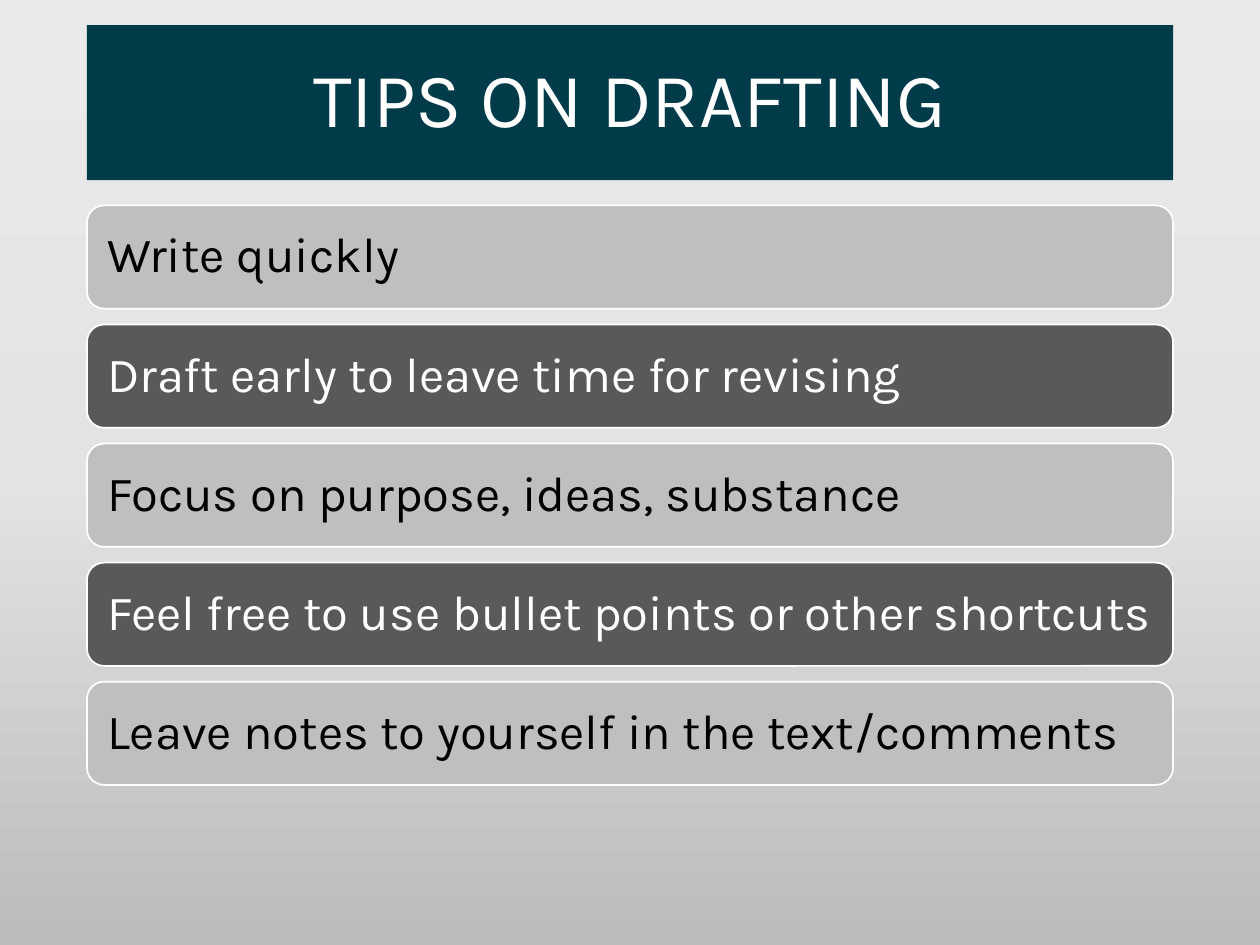
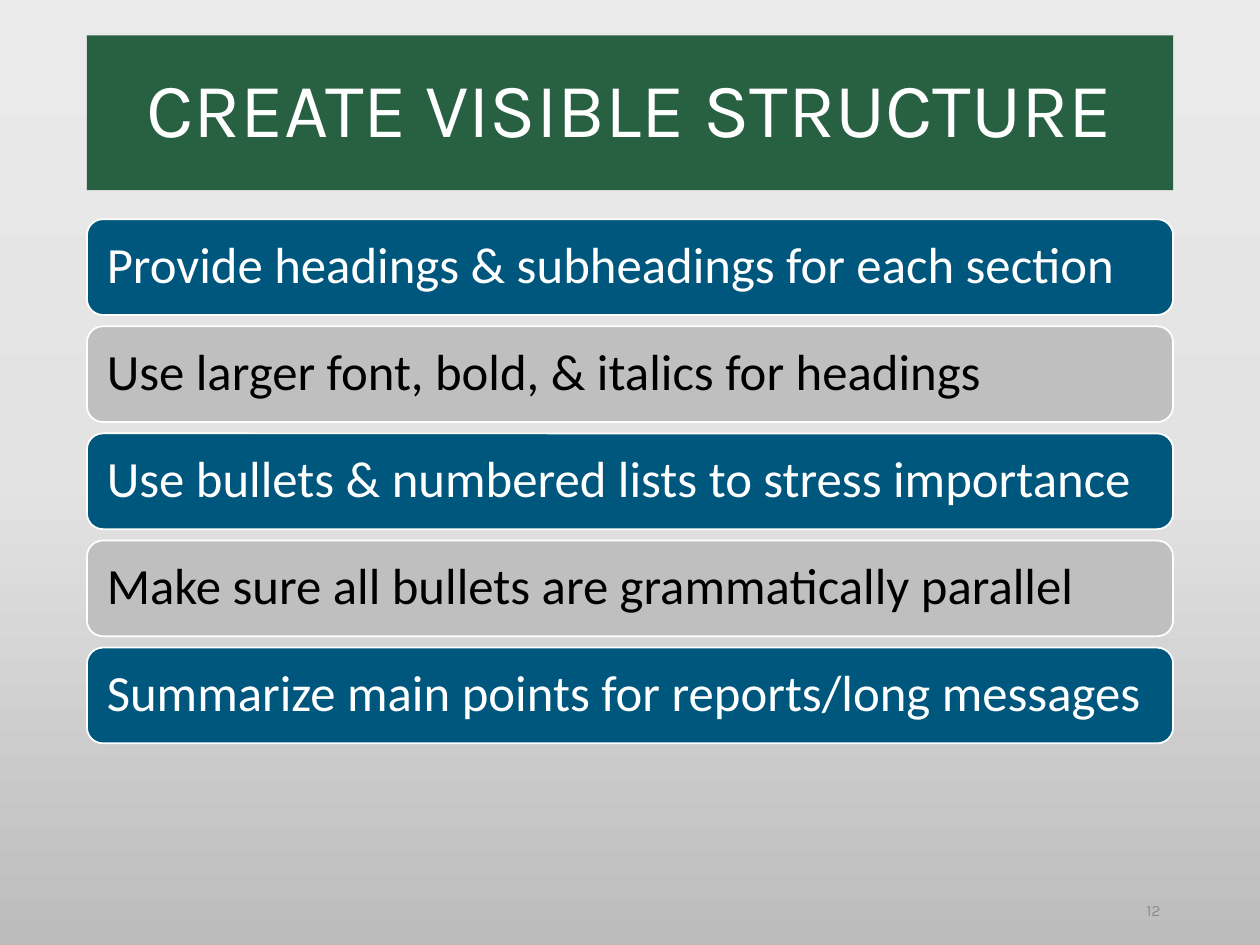
import copy

import pptx
import pptx.dml.color
import pptx.enum.shapes
import pptx.enum.text
import pptx.oxml.ns
import pptx.util
from pptx.util import Inches

COLORS = {
    "white": "FFFFFF",
    "black": "000000",
    "teal": "003B4A",
    "green": "286142",
    "blue": "00577D",
    "dark gray": "595959",
    "light gray": "BFBFBF",
    "number gray": "8C8C8C",
}
BACKGROUND_STOPS = [(0, "EBEAEA"), (0.5, "E4E3E3"), (1, "BDBCBC")]
LEFT, WIDTH = 0.69, 8.62
HEADING_FONT = "Karla"


def rgb(name):
    return pptx.dml.color.RGBColor.from_string(COLORS[name])


class TipDeck:
    def __init__(self):
        self.deck = pptx.Presentation()
        self.deck.slide_width = Inches(10)
        self.deck.slide_height = Inches(7.5)
        self.slide = None
        self.paint_background()

    def paint_background(self):
        """Give the master a vertical three-stop gradient."""
        master = self.deck.slide_master
        fill = master.background.fill
        fill.gradient()
        fill.gradient_angle = 270
        stop_list = master.element.find(".//" + pptx.oxml.ns.qn("a:gsLst"))
        stop_list.insert(1, copy.deepcopy(stop_list[0]))
        for stop, (position, color) in zip(fill.gradient_stops, BACKGROUND_STOPS):
            stop.position = position
            stop.color.rgb = pptx.dml.color.RGBColor.from_string(color)

    def set_text(self, box, text, font, size, color, align, anchor, line_spacing=0.9):
        frame = box.text_frame
        frame.word_wrap = True
        frame.auto_size = pptx.enum.text.MSO_AUTO_SIZE.NONE
        frame.vertical_anchor = anchor
        para = frame.paragraphs[0]
        para.alignment = align
        para.line_spacing = line_spacing
        span = para.add_run()
        span.text = text
        span.font.name = font
        span.font.size = pptx.util.Pt(size)
        span.font.color.rgb = rgb(color)

    def add_slide(self, title, top, color):
        """Start a title-only slide with its title in a filled band."""
        self.slide = self.deck.slides.add_slide(self.deck.slide_layouts[5])
        band = self.slide.shapes.title
        band.left, band.top = Inches(LEFT), Inches(top)
        band.width, band.height = Inches(WIDTH), Inches(1.23)
        band.fill.solid()
        band.fill.fore_color.rgb = rgb(color)
        self.set_text(band, title, HEADING_FONT, 44, "white",
                      pptx.enum.text.PP_ALIGN.CENTER, pptx.enum.text.MSO_ANCHOR.MIDDLE)

    def add_bar(self, text, top, height, fill, font, size):
        bar = self.slide.shapes.add_shape(
            pptx.enum.shapes.MSO_SHAPE.ROUNDED_RECTANGLE,
            Inches(LEFT), Inches(top), Inches(WIDTH), Inches(height))
        bar.shadow.inherit = False
        bar.fill.solid()
        bar.fill.fore_color.rgb = rgb(fill)
        bar.line.color.rgb = rgb("white")
        bar.line.width = pptx.util.Pt(1)
        frame = bar.text_frame
        frame.margin_left = frame.margin_right = Inches(0.12)
        frame.margin_top = frame.margin_bottom = Inches(0.12)
        text_color = "black" if fill == "light gray" else "white"
        self.set_text(bar, text, font, size, text_color,
                      pptx.enum.text.PP_ALIGN.LEFT, pptx.enum.text.MSO_ANCHOR.MIDDLE)

    def add_bars(self, tips, first_top, last_top, height, fills, font, size):
        """Stack evenly spaced bars whose fills alternate."""
        step = (last_top - first_top) / (len(tips) - 1)
        for index, tip in enumerate(tips):
            self.add_bar(tip, first_top + index * step, height,
                         fills[index % len(fills)], font, size)

    def add_slide_number(self, number):
        box = self.slide.shapes.add_textbox(
            Inches(7.06), Inches(6.95), Inches(2.25), Inches(0.4))
        self.set_text(box, number, HEADING_FONT, 9, "number gray",
                      pptx.enum.text.PP_ALIGN.RIGHT, pptx.enum.text.MSO_ANCHOR.BOTTOM, 1.0)


def main():
    tips = TipDeck()

    tips.add_slide("TIPS ON DRAFTING", 0.2, "teal")
    tips.add_bars([
        "Write quickly",
        "Draft early to leave time for revising",
        "Focus on purpose, ideas, substance",
        "Feel free to use bullet points or other shortcuts",
        "Leave notes to yourself in the text/comments",
    ], 1.63, 5.41, 0.82, ["light gray", "dark gray"], "Karla", 28)

    tips.add_slide("CREATE VISIBLE STRUCTURE", 0.28, "green")
    tips.add_bars([
        "Provide headings & subheadings for each section",
        "Use larger font, bold, & italics for headings",
        "Use bullets & numbered lists to stress importance",
        "Make sure all bullets are grammatically parallel",
        "Summarize main points for reports/long messages",
    ], 1.74, 5.14, 0.76, ["blue", "light gray"], "Calibri", 29)
    tips.add_slide_number("12")

    tips.deck.save("out.pptx")


if __name__ == "__main__":
    main()
